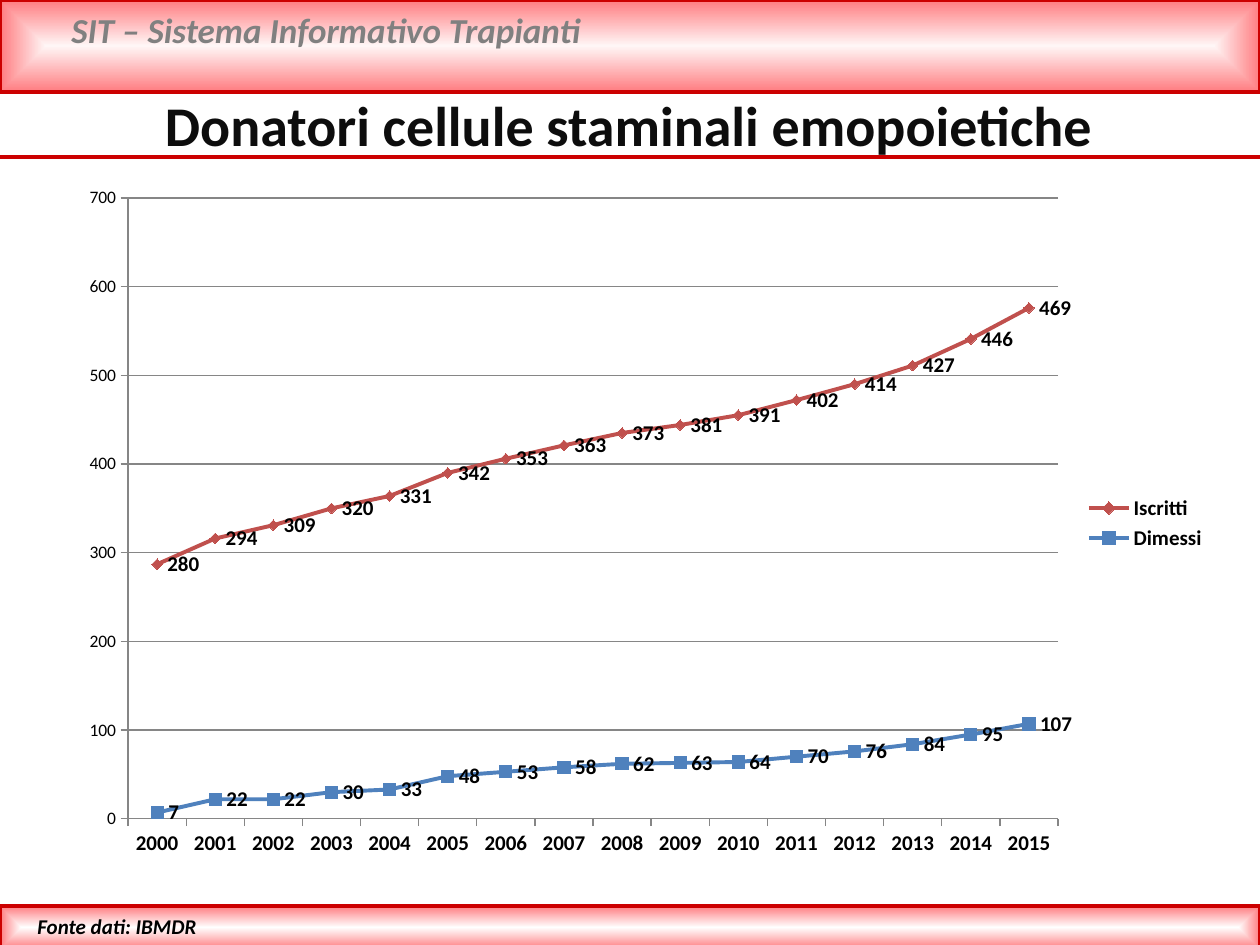
import pptx
import pptx.chart.data
import pptx.dml.color
import pptx.enum.chart
import pptx.enum.shapes
import pptx.enum.text
import pptx.oxml
import pptx.oxml.ns
import pptx.util

COLORS = {
    "border": "CC0000",
    "edge": "FF7C80",
    "header": "FFF6F6",
    "footer": "FFFFFF",
    "brand": "808080",
    "title": "0D0D0D",
    "text": "000000",
    "axis": "868686",
    "Dimessi": "4F81BD",
    "Iscritti": "C0504D",
}
EMU_PER_PX = 914400 / 126
NS = pptx.oxml.ns.nsdecls("a", "c")
ALIGN = pptx.enum.text.PP_ALIGN
MARKER = pptx.enum.chart.XL_MARKER_STYLE
YEARS = [str(year) for year in range(2000, 2016)]
DONORS = {
    "Dimessi": (7, 22, 22, 30, 33, 48, 53, 58, 62, 63, 64, 70, 76, 84, 95, 107),
    "Iscritti": (280, 294, 309, 320, 331, 342, 353, 363, 373, 381, 391, 402, 414, 427, 446, 469),
}
MARKERS = {"Dimessi": (MARKER.SQUARE, 7), "Iscritti": (MARKER.DIAMOND, 6)}


def px(*lengths):
    return [pptx.util.Emu(round(length * EMU_PER_PX)) for length in lengths]


def rgb(name):
    return pptx.dml.color.RGBColor.from_string(COLORS[name])


def set_font(font, size, bold=False, italic=False, color="text"):
    font.name = "Calibri"
    font.size = pptx.util.Pt(size)
    font.bold = bold
    font.italic = italic
    font.color.rgb = rgb(color)


def write(box, text, size, color="text", italic=False, align=ALIGN.LEFT):
    frame = box.text_frame
    frame.word_wrap = True
    frame.auto_size = pptx.enum.text.MSO_AUTO_SIZE.NONE
    frame.vertical_anchor = pptx.enum.text.MSO_ANCHOR.TOP
    para = frame.paragraphs[0]
    para.alignment = align
    span = para.add_run()
    span.text = text
    set_font(span.font, size, True, italic, color)


def set_line(line, color, width):
    line.color.rgb = rgb(color)
    line.width = pptx.util.Pt(width)


class SlideBuilder:
    def __init__(self, deck):
        self.page = deck.slides.add_slide(deck.slide_layouts[5])

    def title(self, area, text):
        box = self.page.shapes.title
        box.left, box.top, box.width, box.height = px(*area)
        write(box, text, 32, "title", align=ALIGN.CENTER)

    def text(self, area, text, size, color="text"):
        box = self.page.shapes.add_textbox(*px(*area))
        write(box, text, size, color, italic=True)

    def band(self, area, center):
        kind = pptx.enum.shapes.MSO_SHAPE.RECTANGLE
        band = self.page.shapes.add_shape(kind, *px(*area))
        band.shadow.inherit = False
        set_line(band.line, "border", 2)
        band.fill.gradient()
        for stop, color in zip(band.fill.gradient_stops, (center, "edge")):
            stop.color.rgb = rgb(color)
        linear = band._element.spPr.find(".//" + pptx.oxml.ns.qn("a:lin"))
        linear.getparent().replace(linear, pptx.oxml.parse_xml(
            f'<a:path {NS} path="shape">'
            '<a:fillToRect l="50000" t="50000" r="50000" b="50000"/></a:path>'))

    def rule(self, y):
        kind = pptx.enum.shapes.MSO_CONNECTOR.STRAIGHT
        rule = self.page.shapes.add_connector(kind, *px(0, y, 1260, y))
        set_line(rule.line, "border", 2)
        rule._element.spPr.append(pptx.oxml.parse_xml(f"<a:effectLst {NS}/>"))

    def line_chart(self, area, plot_area):
        data = pptx.chart.data.CategoryChartData()
        data.categories = YEARS
        for name, values in DONORS.items():
            data.add_series(name, values)
        kind = pptx.enum.chart.XL_CHART_TYPE.LINE_MARKERS_STACKED
        chart = self.page.shapes.add_chart(kind, *px(*area), data).chart
        set_font(chart.font, 10)
        chart.has_title = False
        chart.has_legend = True
        chart.legend.position = pptx.enum.chart.XL_LEGEND_POSITION.RIGHT
        chart.legend.include_in_layout = False
        set_font(chart.legend.font, 12, True)
        self.style_axes(chart)
        chart.plots[0].vary_by_categories = False
        for series in chart.plots[0].series:
            self.style_series(series)
        self.place_plot(chart, area, plot_area)

    def style_axes(self, chart):
        for axis in (chart.category_axis, chart.value_axis):
            axis.major_tick_mark = pptx.enum.chart.XL_TICK_MARK.OUTSIDE
            axis.minor_tick_mark = pptx.enum.chart.XL_TICK_MARK.NONE
            set_line(axis.format.line, "axis", 0.75)
        set_font(chart.category_axis.tick_labels.font, 12, True)
        set_font(chart.value_axis.tick_labels.font, 10)
        chart.value_axis.minimum_scale = 0
        chart.value_axis.maximum_scale = 700
        chart.value_axis.major_unit = 100
        chart.value_axis.has_major_gridlines = True
        set_line(chart.value_axis.major_gridlines.format.line, "axis", 0.75)

    def style_series(self, series):
        series.smooth = False
        set_line(series.format.line, series.name, 2.25)
        marker = series.marker
        marker.style, marker.size = MARKERS[series.name]
        marker.format.fill.solid()
        marker.format.fill.fore_color.rgb = rgb(series.name)
        set_line(marker.format.line, series.name, 0.75)
        labels = series.data_labels
        labels.show_value = True
        labels.position = pptx.enum.chart.XL_LABEL_POSITION.RIGHT
        set_font(labels.font, 12, True)

    def place_plot(self, chart, area, plot_area):
        left, top, width, height = area
        x, y, plot_width, plot_height = plot_area
        shares = {"x": (x - left) / width, "y": (y - top) / height,
                  "w": plot_width / width, "h": plot_height / height}
        modes = '<c:layoutTarget val="inner"/><c:xMode val="edge"/><c:yMode val="edge"/>'
        values = "".join(f'<c:{key} val="{share:.4f}"/>' for key, share in shares.items())
        plot = chart._chartSpace.chart.plotArea
        for layout in plot.findall(pptx.oxml.ns.qn("c:layout")):
            plot.remove(layout)
        plot.insert(0, pptx.oxml.parse_xml(
            f"<c:layout {NS}><c:manualLayout>{modes}{values}</c:manualLayout></c:layout>"))


def main():
    deck = pptx.Presentation()
    deck.slide_width, deck.slide_height = px(1260, 945)
    slide = SlideBuilder(deck)
    slide.band((0, 0, 1260, 92), "header")
    slide.text((59, 2, 1131, 55), "SIT – Sistema Informativo Trapianti", 20, "brand")
    slide.band((0, 906, 1260, 43), "footer")
    slide.rule(157)
    slide.line_chart((67, 175, 1152, 696), (128, 198, 930, 621))
    slide.title((-1, 84, 1260, 81), "Donatori cellule staminali emopoietiche")
    slide.text((25, 907, 248, 38), "Fonte dati: IBMDR", 12)
    deck.save("out.pptx")


if __name__ == "__main__":
    main()
